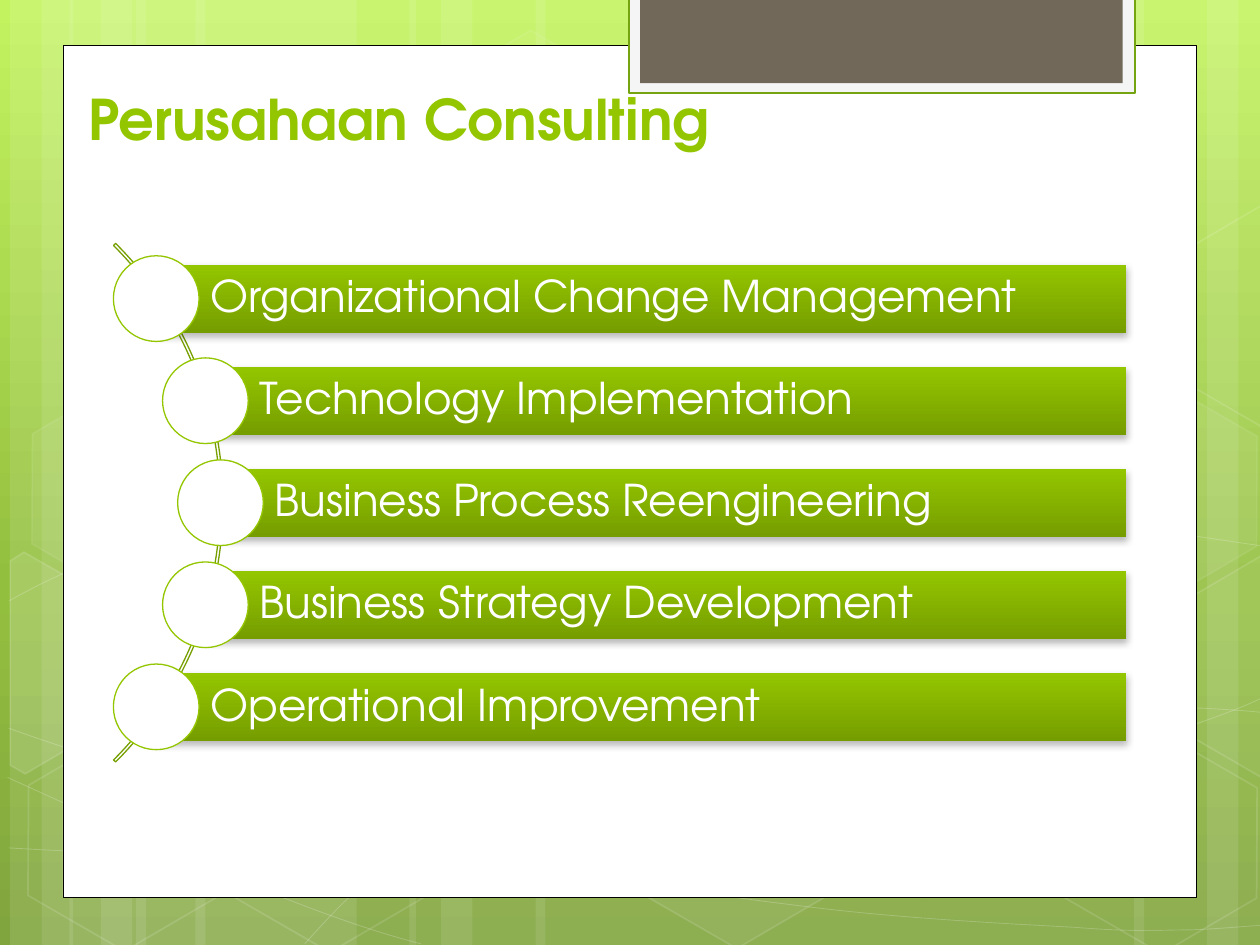
from copy import deepcopy
from math import cos, radians, sin
from lxml.etree import SubElement
from pptx import Presentation
from pptx.dml.color import RGBColor
from pptx.enum.shapes import MSO_SHAPE
from pptx.enum.text import MSO_ANCHOR, PP_ALIGN
from pptx.oxml.ns import qn
from pptx.util import Inches, Pt

FONT = "TeX Gyre Adventor"
TITLE = "Perusahaan Consulting"
SERVICES = [
    ("Organizational Change Management", 1.24),
    ("Technology Implementation", 1.63),
    ("Business Process Reengineering", 1.75),
    ("Business Strategy Development", 1.63),
    ("Operational Improvement", 1.24),
]
BACKGROUND = [(0, "C3F35F"), (0.62, "93BF3F"), (1, "81A53E")]
STRIPES = [
    (1.08, 1.75), (0.08, 0.5), (0.33, 0.83), (1.55, 1.75), (0.55, 0.5), (0.8, 0.83),
    (7.33, 1.75), (9.58, 0.5), (9, 0.83), (4.25, 3.08), (3.25, 0.5), (3.5, 0.83),
]
CURVES = [
    [(0.07, 6.73), (0.61, 6.76), (1.15, 6.79), (1.9, 6.78), (2.65, 6.77), (3.58, 6.75),
     (4.58, 6.65), (5.58, 6.55), (7, 6.36), (7.92, 6.17), (8.83, 5.98), (9.77, 5.68),
     (10.07, 5.51)],
    [(0.07, 4.77), (0.36, 4.61), (0.65, 4.46), (1.21, 4.31), (1.78, 4.16), (2.59, 3.94),
     (3.47, 3.87), (4.36, 3.8), (5.44, 3.79), (6.54, 3.87), (7.64, 3.95), (9.47, 4.26),
     (10.07, 4.34)],
    [(0.06, 6.17), (1.27, 6.72), (2.47, 7.27), (3.34, 7.49)],
    [(0.07, 5.78), (0.38, 5.89), (0.7, 6), (1.28, 6.16), (1.86, 6.31), (2.73, 6.56),
     (3.57, 6.73), (4.4, 6.9), (5.45, 7.08), (6.28, 7.18), (7.11, 7.29), (8, 7.33),
     (8.53, 7.36), (9.05, 7.4), (9.19, 7.38), (9.45, 7.38), (9.71, 7.37), (9.89, 7.35),
     (10.07, 7.34)],
    [(2.42, 7.49), (2.6, 7.29), (2.78, 7.09), (3.02, 6.91), (3.26, 6.73), (3.6, 6.53),
     (3.88, 6.39), (4.16, 6.25), (4.33, 6.19), (4.7, 6.09), (5.06, 5.99), (5.73, 5.85),
     (6.08, 5.78), (6.44, 5.71), (6.49, 5.71), (6.8, 5.69), (7.11, 5.66), (7.6, 5.63),
     (7.94, 5.62), (8.29, 5.61), (8.86, 5.62), (8.86, 5.62), (9.08, 5.62), (9.31, 5.62),
     (9.53, 5.62), (9.71, 5.63), (9.88, 5.64), (9.97, 5.65), (10.06, 5.66), (10.03, 5.65),
     (10.06, 5.66)],
]
HEXAGONS = [
    (3.34, 0.36, 4, 8), (4.97, 5.89, 6, 12), (0.11, 5.91, 0, 12), (0.14, 3.12, 7, 8),
    (1.74, 5.92, 0, 12), (7.53, 4.53, 10, 12), (8.34, 5.93, 0, 12), (8.34, 3.14, 7, 8),
]
CUT_HEXAGONS = [
    ((0.36, 5.35), 10,
     [(0.08, 4.45), (0.19, 4.38), (0.96, 4.82), (0.95, 5.7), (0.2, 6.14), (0.08, 6.07)]),
    ((9.85, 5.2), 4,
     [(9.26, 4.85), (10.01, 4.41), (10.09, 4.46), (10.09, 6.13), (10.02, 6.17), (9.26, 5.73)]),
    ((9.85, 2.41), 0,
     [(9.26, 2.07), (10.01, 1.63), (10.1, 1.68), (10.09, 3.35), (10.02, 3.39), (9.26, 2.95)]),
]
TILT = 30
BAR_TOP, BAR_STEP, BAR_HEIGHT, BAR_RIGHT, CIRCLE = 2.1, 0.81, 0.54, 8.94, 0.68


def rgb(color):
    return RGBColor.from_string(color)


def set_alpha(s, parent, percent):
    for clr in s._element.spPr.xpath(f"{parent}a:solidFill/a:srgbClr"):
        SubElement(clr, qn("a:alpha"), val=str(percent * 1000))


def style(s, fill=None, line=None, width=1, fill_alpha=100, line_alpha=100):
    s.shadow.inherit = False
    if fill and fill_alpha:
        s.fill.solid()
        s.fill.fore_color.rgb = rgb(fill)
        if fill_alpha < 100:
            set_alpha(s, "", fill_alpha)
    else:
        s.fill.background()
    if line:
        s.line.color.rgb = rgb(line)
        s.line.width = Pt(width)
        if line_alpha < 100:
            set_alpha(s, "a:ln/", line_alpha)
    else:
        s.line.fill.background()
    return s


def add_shape(kind, x, y, w, h, **look):
    s = slide.shapes.add_shape(kind, Inches(x), Inches(y), Inches(w), Inches(h))
    return style(s, **look)


def add_outline(points, close, **look):
    start, *rest = [(Inches(x), Inches(y)) for x, y in points]
    builder = slide.shapes.build_freeform(*start)
    builder.add_line_segments(rest, close=close)
    return style(builder.convert_to_shape(), **look)


def add_curve(controls, **look):
    s = add_outline(controls, False, **look)
    segments = s._element.spPr.xpath(".//a:lnTo")
    outline = segments[0].getparent()
    for i in range(0, len(segments), 3):
        curve = SubElement(outline, qn("a:cubicBezTo"))
        for segment in segments[i:i + 3]:
            curve.append(segment[0])
            outline.remove(segment)


def turn(points, center, degrees):
    cx, cy = center
    c, n = cos(radians(degrees)), sin(radians(degrees))
    return [(cx + (x - cx) * c - (y - cy) * n, cy + (x - cx) * n + (y - cy) * c)
            for x, y in points]


def gradient(fill, stops):
    fill.gradient()
    fill.gradient_angle = 270
    first = fill.gradient_stops[0]._gs
    for _ in stops[2:]:
        first.addnext(deepcopy(first))
    for stop, (position, color) in zip(fill.gradient_stops, stops):
        stop.position = position
        stop.color.rgb = rgb(color)


def add_shadow(s):
    effects = s._element.spPr.find(qn("a:effectLst"))
    shadow = SubElement(effects, qn("a:outerShdw"), blurRad=str(Pt(4)), dist=str(Pt(2)),
                        dir="5400000", rotWithShape="0")
    clr = SubElement(shadow, qn("a:srgbClr"), val="000000")
    SubElement(clr, qn("a:alpha"), val="28000")


def write(s, text, size, color, anchor, left=0.1, bold=False):
    tf = s.text_frame
    tf.word_wrap = True
    tf.vertical_anchor = anchor
    tf.margin_left = Inches(left)
    p = tf.paragraphs[0]
    p.alignment = PP_ALIGN.LEFT
    r = p.add_run()
    r.text = text
    r.font.name = FONT
    r.font.size = Pt(size)
    r.font.bold = bold
    r.font.color.rgb = rgb(color)
    return tf


prs = Presentation()
prs.slide_width, prs.slide_height = Inches(10), Inches(7.5)
slide = prs.slides.add_slide(prs.slide_layouts[6])
gradient(slide.background.fill, BACKGROUND)

for x, w in STRIPES:
    add_shape(MSO_SHAPE.RECTANGLE, x, 0, w, 7.5, fill="FFFFFF", fill_alpha=10)
for controls in CURVES:
    add_curve(controls, line="FFFFFF", width=0.5, line_alpha=20)
for x, y, fill_alpha, line_alpha in HEXAGONS:
    s = add_shape(MSO_SHAPE.HEXAGON, x, y, 1.75, 1.52, fill="FFFFFF", fill_alpha=fill_alpha,
                  line="FFFFFF", line_alpha=line_alpha)
    s.adjustments[0] = 0.285
    s.rotation = TILT
for center, fill_alpha, points in CUT_HEXAGONS:
    s = add_outline(turn(points, center, -TILT), True, fill="FFFFFF", fill_alpha=fill_alpha,
                    line="FFFFFF", line_alpha=12)
    s.rotation = TILT

add_shape(MSO_SHAPE.RECTANGLE, 0.5, 0.36, 9, 6.76, fill="FFFFFF", line="000000", width=0.5)
add_shape(MSO_SHAPE.RECTANGLE, 4.99, -0.02, 4.02, 0.76, fill="F5F5F5", line="74A510", width=1.25)
add_shape(MSO_SHAPE.RECTANGLE, 5.08, -0.02, 3.83, 0.68, fill="71685A")

title = slide.shapes.add_textbox(Inches(0.6), Inches(0.48), Inches(8.79), Inches(0.77))
write(title, TITLE, 32, "94C600", MSO_ANCHOR.BOTTOM, bold=True)

arc = add_shape(MSO_SHAPE.BLOCK_ARC, -4.05, 1.08, 5.82, 5.82, line="779F00", width=0.75)
for i, value in enumerate((189, 27, 0.004)):
    arc.adjustments[i] = value

for i, (service, x) in enumerate(SERVICES):
    y = BAR_TOP + i * BAR_STEP
    bar = add_shape(MSO_SHAPE.RECTANGLE, x, y, BAR_RIGHT - x, BAR_HEIGHT)
    gradient(bar.fill, [(0, "94C600"), (1, "769D00")])
    add_shadow(bar)
    tf = write(bar, service, 25, "FFFFFF", MSO_ANCHOR.MIDDLE, left=0.43)
    tf.margin_top = tf.margin_right = tf.margin_bottom = Inches(0.07)
    tf.paragraphs[0].line_spacing = 0.9
    add_shape(MSO_SHAPE.OVAL, x - CIRCLE / 2, y + (BAR_HEIGHT - CIRCLE) / 2, CIRCLE, CIRCLE,
              fill="FFFFFF", line="94C600", width=0.75)

prs.save("out.pptx")
